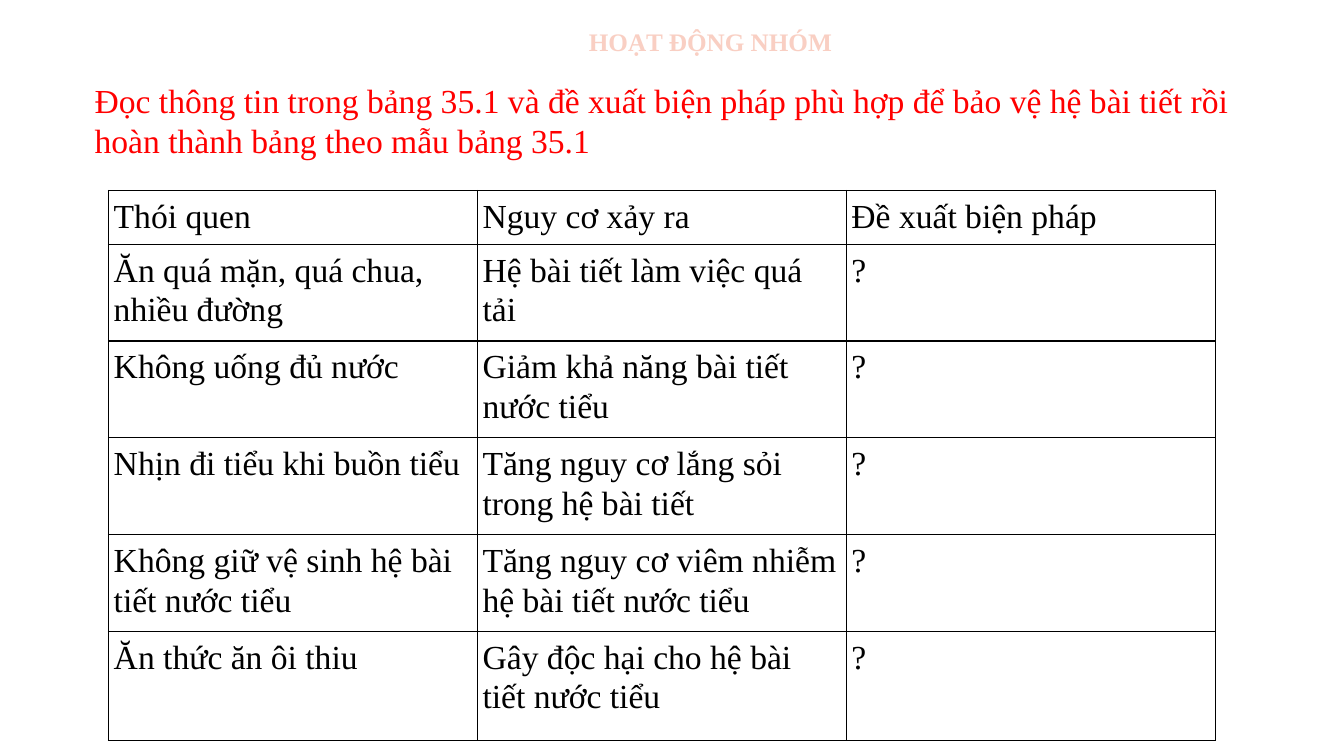
import pptx
import pptx.util
import pptx.dml.color
import pptx.enum.text
import pptx.oxml
import pptx.oxml.ns

Pt = pptx.util.Pt
MSO_ANCHOR = pptx.enum.text.MSO_ANCHOR
PP_ALIGN = pptx.enum.text.PP_ALIGN
MSO_AUTO_SIZE = pptx.enum.text.MSO_AUTO_SIZE

ROWS = [
    ("Thói quen\u00a0", "Nguy cơ xảy ra", "Đề xuất biện pháp"),
    ("Ăn quá mặn, quá chua, nhiều đường", "Hệ bài tiết làm việc quá tải", "?"),
    ("Không uống đủ nước", "Giảm khả năng bài tiết nước tiểu", "?"),
    ("Nhịn đi tiểu khi buồn tiểu\u00a0", "Tăng nguy cơ lắng sỏi trong hệ bài tiết", "?"),
    ("Không giữ vệ sinh hệ bài tiết nước tiểu",
     "Tăng nguy cơ viêm nhiễm hệ bài tiết nước tiểu", "?"),
    ("Ăn thức ăn ôi thiu", "Gây độc hại cho hệ bài tiết nước tiểu\u00a0", "?"),
]
ROW_HEIGHTS = [38.5] + [69] * 4 + [78]
COL_WIDTH = 263.5


def rgb(value):
    return pptx.dml.color.RGBColor.from_string(value)


class Builder:
    font = "Times New Roman"
    size = 24
    ink = "000000"
    paper = "FFFFFF"
    inset = 3.75

    def __init__(self, s):
        self.s = s

    def fill_text(self, tf, text, color, size=None, bold=False):
        """Set the text of a frame, style its runs and return its paragraph."""
        tf.text = text
        p = tf.paragraphs[0]
        for r in p.runs:
            r.font.name = self.font
            r.font.size = Pt(size or self.size)
            r.font.bold = bold
            r.font.color.rgb = rgb(color)
        return p

    def title(self, text, left, top, width, height, color):
        sp = self.s.shapes.title
        sp.left, sp.top, sp.width, sp.height = map(Pt, (left, top, width, height))
        tf = sp.text_frame
        p = self.fill_text(tf, text, color, size=18, bold=True)
        p.alignment = PP_ALIGN.CENTER
        p.line_spacing = 1.0
        p.space_before = Pt(0)
        tf.word_wrap = False
        tf.auto_size = MSO_AUTO_SIZE.NONE
        tf.vertical_anchor = MSO_ANCHOR.TOP

    def text(self, text, left, top, width, height, color):
        sp = self.s.shapes.add_textbox(*map(Pt, (left, top, width, height)))
        tf = sp.text_frame
        tf.word_wrap = True
        self.fill_text(tf, text, color)

    def border(self, cell):
        """Draw a 1 pt line on all four sides of a cell."""
        tcPr = cell._tc.get_or_add_tcPr()
        for i, side in enumerate(("lnL", "lnR", "lnT", "lnB")):
            tcPr.insert(i, pptx.oxml.parse_xml(
                f'<a:{side} {pptx.oxml.ns.nsdecls("a")} w="12700"><a:solidFill>'
                f'<a:srgbClr val="{self.ink}"/></a:solidFill></a:{side}>'))

    def table(self, rows, left, top, col_width, row_heights):
        n = len(rows[0])
        frame = self.s.shapes.add_table(
            len(rows), n, Pt(left), Pt(top), Pt(col_width * n), Pt(sum(row_heights)))
        table = frame.table
        table.first_row = table.horz_banding = False
        for col in table.columns:
            col.width = Pt(col_width)
        for row, height, texts in zip(table.rows, row_heights, rows):
            row.height = Pt(height)
            for cell, text in zip(row.cells, texts):
                cell.margin_left = cell.margin_right = Pt(self.inset)
                cell.margin_top = cell.margin_bottom = Pt(self.inset)
                cell.fill.solid()
                cell.fill.fore_color.rgb = rgb(self.paper)
                self.fill_text(cell.text_frame, text, self.ink).line_spacing = 1.07
                self.border(cell)


def main():
    prs = pptx.Presentation()
    prs.slide_width, prs.slide_height = Pt(960), Pt(540)
    b = Builder(prs.slides.add_slide(prs.slide_layouts[5]))
    b.title("HOẠT ĐỘNG NHÓM", 412.5, 15, 190, 29, "F9CFC3")
    b.text("Đọc thông tin trong bảng 35.1 và đề xuất biện pháp phù hợp để bảo vệ "
           "hệ bài tiết rồi hoàn thành bảng theo mẫu bảng 35.1",
           60.5, 53.5, 866, 65.5, "FF0000")
    b.table(ROWS, 77.5, 136, COL_WIDTH, ROW_HEIGHTS)
    prs.save("out.pptx")


if __name__ == "__main__":
    main()
